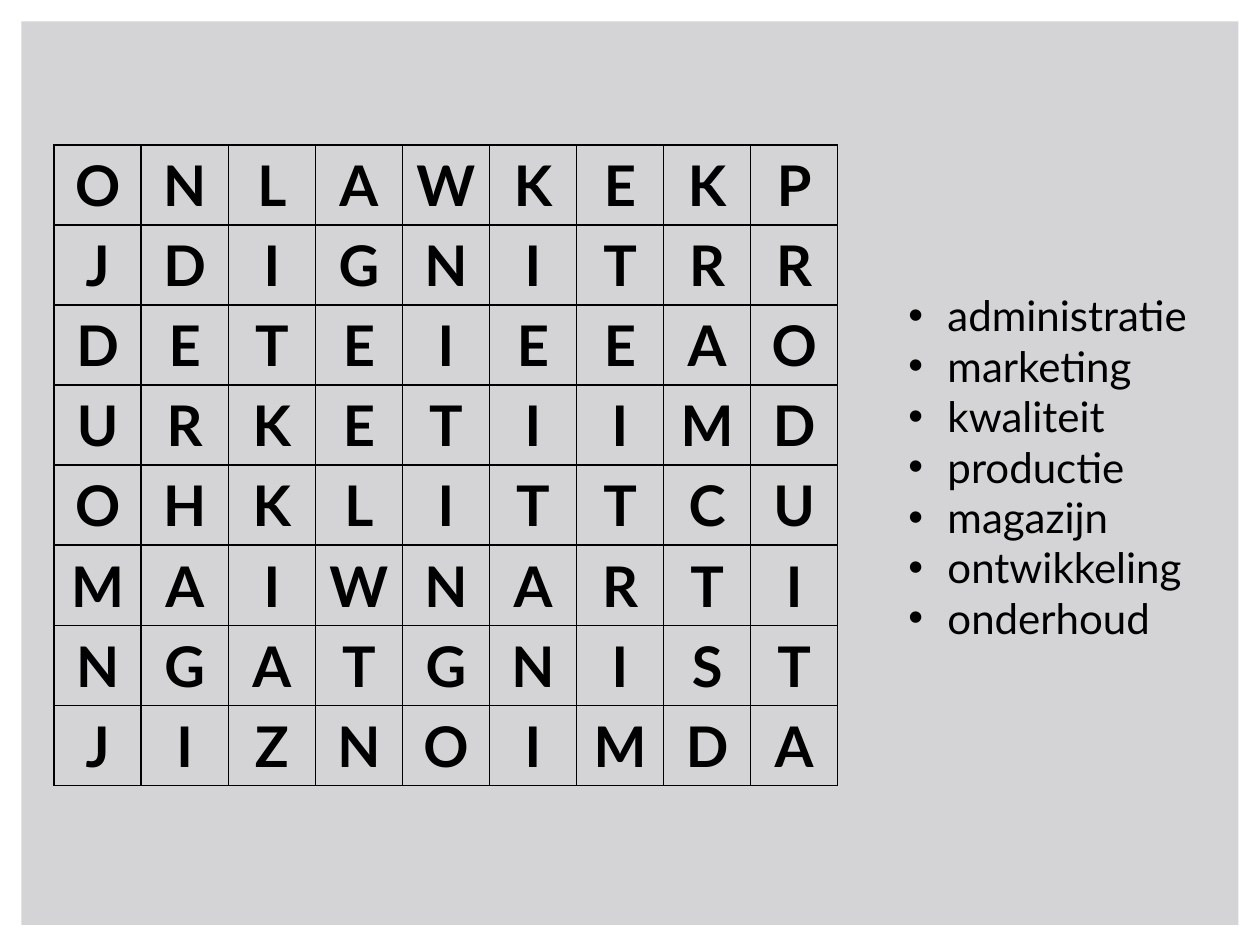
from pptx import Presentation
from pptx.dml.color import RGBColor
from pptx.enum.shapes import MSO_SHAPE
from pptx.enum.text import MSO_ANCHOR, MSO_AUTO_SIZE, PP_ALIGN
from pptx.oxml import parse_xml
from pptx.oxml.ns import nsdecls
from pptx.util import Inches, Pt

RECT = MSO_SHAPE.RECTANGLE
MIDDLE, TOP = MSO_ANCHOR.MIDDLE, MSO_ANCHOR.TOP
CENTER, LEFT = PP_ALIGN.CENTER, PP_ALIGN.LEFT
FIXED = MSO_AUTO_SIZE.NONE

FONT, BLACK, GREY = "Lato", "000000", "D4D4D6"
GRID = [
    "ONLAWKEKP",
    "JDIGNITRR",
    "DETEIEEAO",
    "URKETIIMD",
    "OHKLITTCU",
    "MAIWNARTI",
    "NGATGNIST",
    "JIZNOIMDA",
]
WORDS = ["administratie", "marketing", "kwaliteit", "productie",
         "magazijn", "ontwikkeling", "onderhoud"]


def color(code):
    return RGBColor.from_string(code)


def box(*sides):
    return [Inches(side) for side in sides]


def style(para, size, bold, align):
    para.alignment = align
    font = para.font
    font.name, font.size, font.bold = FONT, Pt(size), bold
    font.color.rgb = color(BLACK)


def add_panel(slide):
    panel = slide.shapes.add_shape(RECT, *box(0.17, 0.17, 9.66, 7.17))
    panel.shadow.inherit = False
    panel.fill.solid()
    panel.fill.fore_color.rgb = color(GREY)
    panel.line.fill.background()


def add_border(cell):
    props = cell._tc.get_or_add_tcPr()
    for side in "LRTB":
        props.append(parse_xml(
            f'<a:ln{side} {nsdecls("a")} w="{Pt(1)}"><a:solidFill>'
            f'<a:srgbClr val="{BLACK}"/></a:solidFill></a:ln{side}>'))


def add_grid(slide, rows):
    wide, high = 6.22, 5.07
    frame = slide.shapes.add_table(len(rows), len(rows[0]),
                                   *box(0.43, 1.15, wide, high))
    table = frame.table
    table.first_row = table.horz_banding = False
    for col in table.columns:
        col.width = Inches(wide / len(rows[0]))
    for row, letters in zip(table.rows, rows):
        row.height = Inches(high / len(rows))
        for cell, letter in zip(row.cells, letters):
            cell.text = letter
            cell.vertical_anchor = MIDDLE
            style(cell.text_frame.paragraphs[0], 32, True, CENTER)
            add_border(cell)
            cell.fill.background()


def add_bullet(para):
    props = para._p.get_or_add_pPr()
    props.set("marL", str(Inches(0.31)))
    props.set("indent", str(-Inches(0.31)))
    props.append(parse_xml(f'<a:buFont {nsdecls("a")} typeface="Arial"/>'))
    props.append(parse_xml(f'<a:buChar {nsdecls("a")} char="•"/>'))


def fill_list(body, words):
    body.left, body.top, body.width, body.height = box(7.11, 2.25, 2.44, 3.23)
    frame = body.text_frame
    frame.text = "\n".join(words)
    frame.word_wrap = True
    frame.auto_size = FIXED
    frame.vertical_anchor = TOP
    for para in frame.paragraphs:
        para.space_before = Pt(0)
        add_bullet(para)
        style(para, 24, False, LEFT)


def main():
    deck = Presentation()
    deck.slide_width, deck.slide_height = box(10, 7.5)
    slide = deck.slides.add_slide(deck.slide_layouts[1])

    # The slide has no title
    title = slide.shapes.title._element
    title.getparent().remove(title)
    body = slide.placeholders[1]

    # Grey panel, letter grid, then the words to find on top
    add_panel(slide)
    add_grid(slide, GRID)
    fill_list(body, WORDS)
    slide.shapes._spTree.append(body._element)

    deck.save("out.pptx")


if __name__ == "__main__":
    main()
